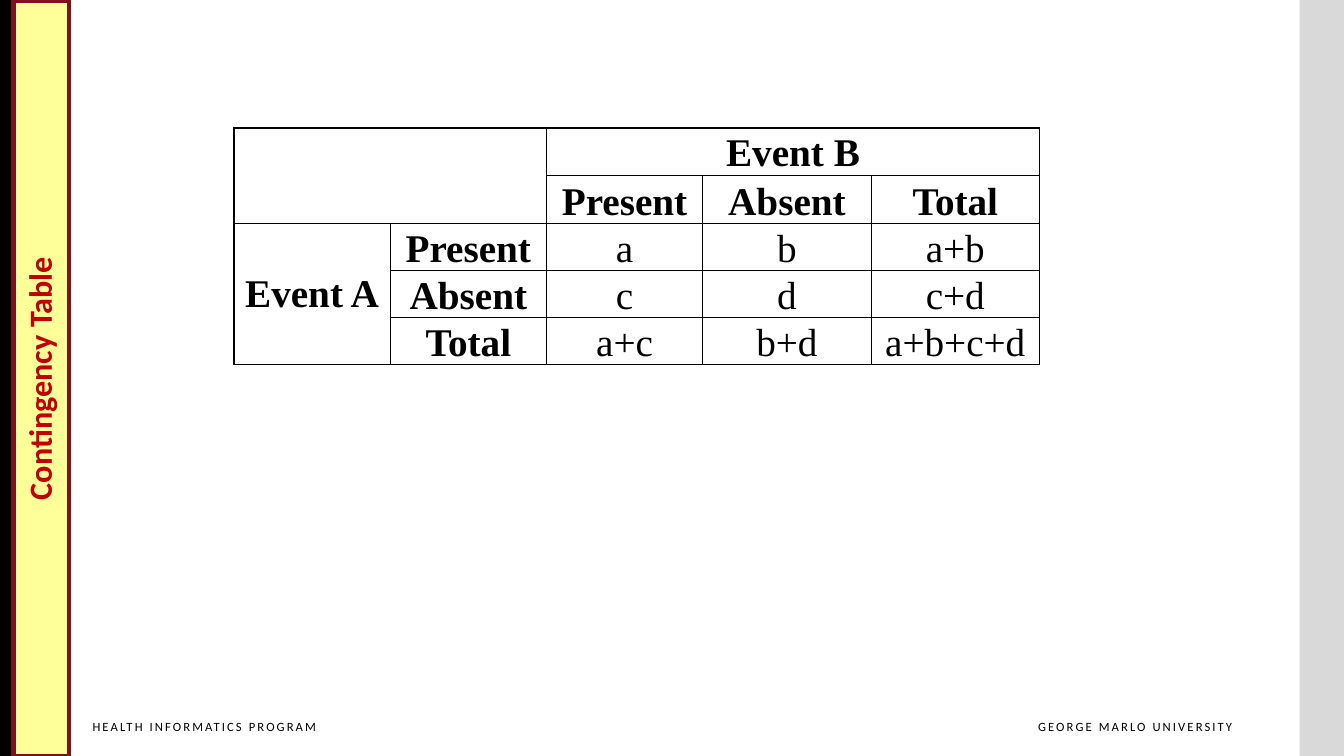
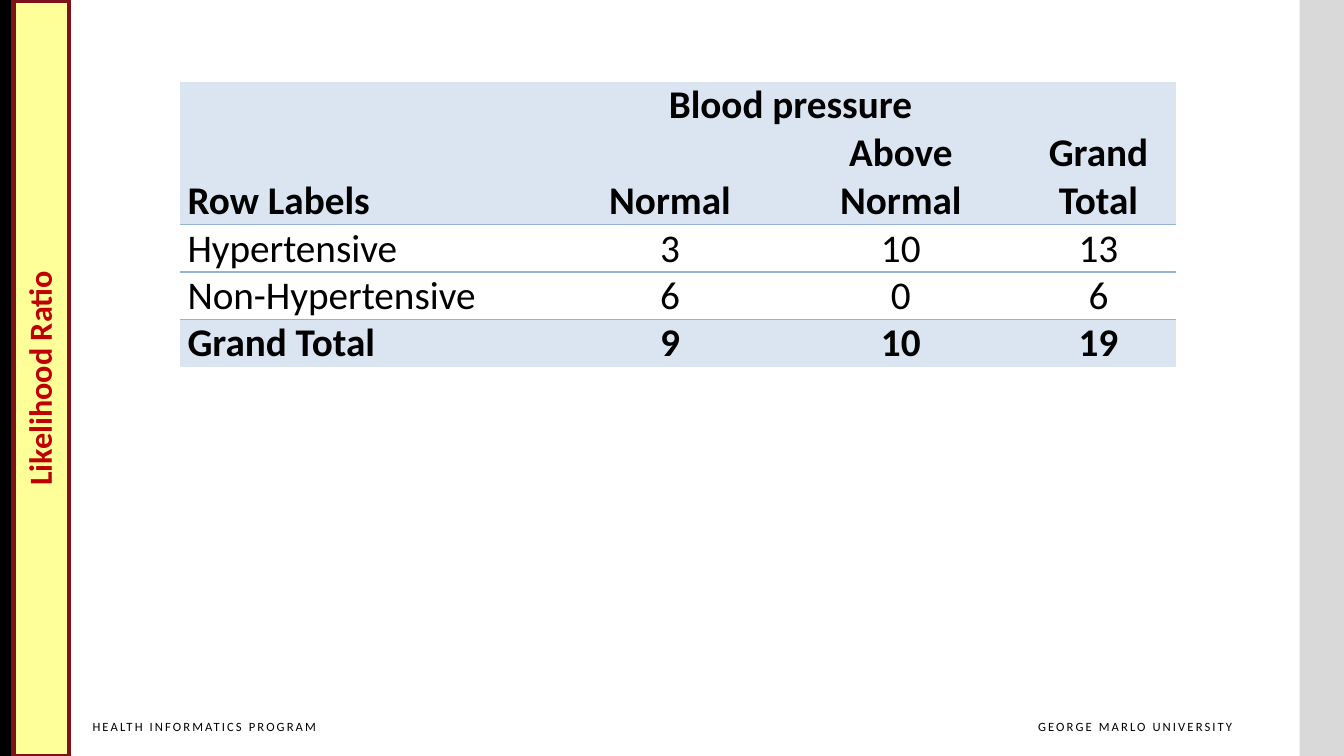
from lxml import etree
from pptx import Presentation, util as u
from pptx.dml.color import RGBColor
from pptx.enum import shapes, text
from pptx.oxml.ns import qn

W, H = 13.33, 7.5
BLACK, GREY, YELLOW = "000000", "D9D9D9", "FFFF99"
MAROON, RED, PALE, BLUE = "7D1219", "C00000", "DBE5F1", "95B3D7"
NO_STYLE = "{2D5ABB26-0587-4C30-8999-92F81FD0307C}"
LEFT, CENTER, RIGHT = text.PP_ALIGN.LEFT, text.PP_ALIGN.CENTER, text.PP_ALIGN.RIGHT
rgb = RGBColor.from_string


def write(tf, words, size, font, color=BLACK, bold=False, align=LEFT):
    p = tf.paragraphs[0]
    p.alignment = align
    r = p.add_run()
    r.text = words
    r.font.size, r.font.name, r.font.bold = u.Pt(size), font, bold
    r.font.color.rgb = rgb(color)
    return r


def border(cell, sides, color):
    tcPr = cell._tc.get_or_add_tcPr()
    for side in sides:
        ln = etree.SubElement(tcPr, qn("a:ln" + side), w=str(u.Pt(1)))
        fill = etree.SubElement(ln, qn("a:solidFill"))
        etree.SubElement(fill, qn("a:srgbClr"), val=color)


# Spans are (row, column, last row, last column); rules are {row: sides}
pages = [
    dict(title="Contingency Table", font="Times New Roman", at=(2.32, 1.27),
         cols=[1.55] * 3 + [1.67] * 2, rows=[0.43, 0.48] + [0.43] * 3,
         cells=[["", "", "Event B", "", ""],
                ["", "", "Present", "Absent", "Total"],
                ["Event A", "Present", "a", "b", "a+b"],
                ["", "Absent", "c", "d", "c+d"],
                ["", "Total", "a+c", "b+d", "a+b+c+d"]],
         spans=[(0, 0, 1, 1), (0, 2, 0, 4), (2, 0, 4, 0)],
         bold_rows=(0, 1), bold_cols=(0, 1), left_cols=(), shaded=(),
         rules={i: "LRTB" for i in range(5)}, rule_color=BLACK),
    dict(title="Likelihood Ratio", font="Calibri", at=(1.79, 0.81),
         cols=[3.76, 2.19, 2.39, 1.53], rows=[0.47, 0.95, 0.47, 0.47, 0.47],
         cells=[["", "Blood pressure", "", ""],
                ["Row Labels", "Normal", "Above Normal", "Grand Total"],
                ["Hypertensive", "3", "10", "13"],
                ["Non-Hypertensive", "6", "0", "6"],
                ["Grand Total", "9", "10", "19"]],
         spans=[(0, 1, 0, 2)],
         bold_rows=(0, 1, 4), bold_cols=(), left_cols=(0,), shaded=(0, 1, 4),
         rules={1: "B", 2: "T", 3: "B", 4: "T"}, rule_color=BLUE),
]

prs = Presentation()
prs.slide_width, prs.slide_height = u.Inches(W), u.Inches(H)

for page in pages:
    s = prs.slides.add_slide(prs.slide_layouts[6])

    # Edge bands, then the title band turned to run up the left side
    for x, y, w, h, color in [(W - 0.44, 0, 0.44, H, GREY), (0, 0, 0.11, H, BLACK),
                              (-3.34, 3.48, H, 0.55, YELLOW)]:
        sp = s.shapes.add_shape(shapes.MSO_SHAPE.RECTANGLE, *map(u.Inches, (x, y, w, h)))
        sp.shadow.inherit = False
        sp.fill.solid()
        sp.fill.fore_color.rgb = rgb(color)
        sp.line.fill.background()
    sp.rotation = 270
    sp.line.color.rgb, sp.line.width = rgb(MAROON), u.Pt(3.35)
    tf = sp.text_frame
    tf.margin_left = tf.margin_right = tf.margin_top = tf.margin_bottom = u.Inches(0.18)
    tf.vertical_anchor = text.MSO_ANCHOR.MIDDLE
    write(tf, page["title"], 23, "Calibri", RED, True, CENTER)
    tf.paragraphs[0].line_spacing = 0.9

    # Footers
    for x, w, words, align in [(9.87, 2.35, "GEORGE MARLO UNIVERSITY", RIGHT),
                               (0.82, 2.54, "HEALTH INFORMATICS PROGRAM", LEFT)]:
        tf = s.shapes.add_textbox(*map(u.Inches, (x, 7.08, w, 0.33))).text_frame
        tf.word_wrap, tf.margin_right = True, 0
        r = write(tf, words, 9, "Calibri", align=align)
        r.font._element.set("spc", "150")

    # Table
    cols, rows = page["cols"], page["rows"]
    size = (sum(cols), sum(rows))
    tb = s.shapes.add_table(len(rows), len(cols), *map(u.Inches, page["at"] + size)).table
    tb.first_row = tb.horz_banding = False
    tb._tbl.tblPr.find(qn("a:tableStyleId")).text = NO_STYLE
    for col, w in zip(tb.columns, cols):
        col.width = u.Inches(w)
    for row, h in zip(tb.rows, rows):
        row.height = u.Inches(h)
    for top, left, bottom, right in page["spans"]:
        tb.cell(top, left).merge(tb.cell(bottom, right))

    for i, line in enumerate(page["cells"]):
        for j, words in enumerate(line):
            cell = tb.cell(i, j)
            cell.margin_left = cell.margin_right = u.Inches(0.07)
            cell.margin_top = cell.margin_bottom = 0
            tall = cell.is_merge_origin and cell.span_height > 1
            cell.vertical_anchor = text.MSO_ANCHOR.MIDDLE if tall else text.MSO_ANCHOR.BOTTOM
            border(cell, page["rules"].get(i, ""), page["rule_color"])
            if i in page["shaded"]:
                cell.fill.solid()
                cell.fill.fore_color.rgb = rgb(PALE)
            else:
                cell.fill.background()
            if words:
                bold = i in page["bold_rows"] or j in page["bold_cols"]
                align = LEFT if j in page["left_cols"] else CENTER
                write(cell.text_frame, words, 28, page["font"], bold=bold, align=align)

prs.save("out.pptx")
